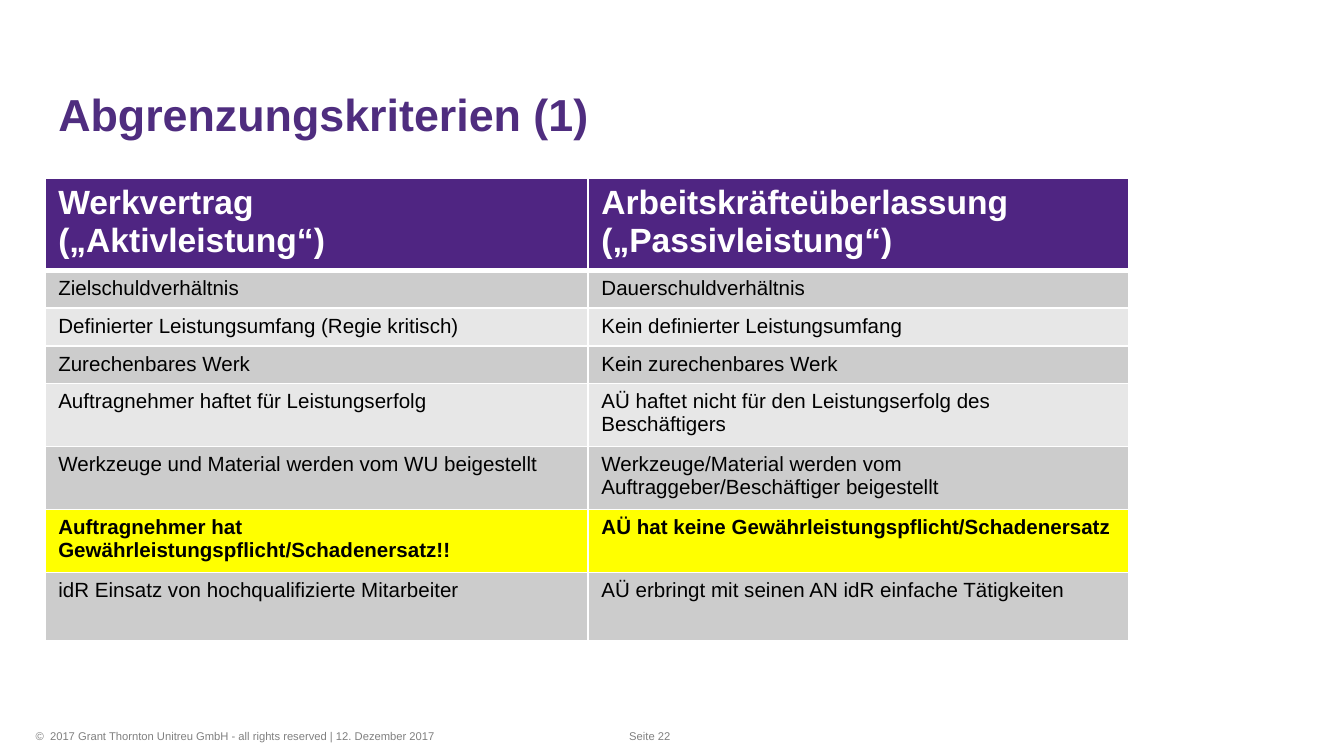
from pptx import Presentation
from pptx.dml.color import RGBColor
from pptx.enum.text import MSO_ANCHOR, PP_ALIGN
from pptx.oxml import parse_xml
from pptx.oxml.ns import nsdecls
from pptx.util import Pt

PX = 9525  # EMU per px, 96 px to the inch
LEFT, MIDDLE = PP_ALIGN.LEFT, MSO_ANCHOR.MIDDLE
PURPLE, WHITE, YELLOW = "4F2582", "FFFFFF", "FFFF00"
DARK, LIGHT = "CCCCCC", "E7E7E7"


def write(tf, text, size, color, bold=False, anchor=None):
    """Fill a text frame, one paragraph per line of text."""
    tf.text = text
    tf.word_wrap = True
    if anchor is not None:
        tf.vertical_anchor = anchor
    for p in tf.paragraphs:
        p.alignment = LEFT
        f = p.font
        for r in p.runs:
            f = r.font
            f.name, f.size, f.bold = "Arial", Pt(size), bold
            f.color.rgb = RGBColor.from_string(color)


def border(cell, side, width):
    cell._tc.get_or_add_tcPr().append(parse_xml(
        f'<a:{side} {nsdecls("a")} w="{Pt(width)}"><a:solidFill>'
        f'<a:srgbClr val="{WHITE}"/></a:solidFill></a:{side}>'))


prs = Presentation()
prs.slide_width, prs.slide_height = 960 * PX, 540 * PX
s = prs.slides.add_slide(prs.slide_layouts[5])

title = s.shapes.title
title.left, title.top, title.width, title.height = 32 * PX, 37 * PX, 787 * PX, 88 * PX
write(title.text_frame, "Abgrenzungskriterien (1)", 24, "4F2D7F", bold=True, anchor=MIDDLE)

# left text, right text, fill, row height
rows = [
    ("Werkvertrag\n(„Aktivleistung“)",
     "Arbeitskräfteüberlassung („Passivleistung“)", PURPLE, 66),
    ("Zielschuldverhältnis", "Dauerschuldverhältnis", DARK, 27),
    ("Definierter Leistungsumfang (Regie kritisch)",
     "Kein definierter Leistungsumfang", LIGHT, 27),
    ("Zurechenbares Werk", "Kein zurechenbares Werk", DARK, 27),
    ("Auftragnehmer haftet für Leistungserfolg",
     "AÜ haftet nicht für den Leistungserfolg des Beschäftigers", LIGHT, 45),
    ("Werkzeuge und Material werden vom WU beigestellt",
     "Werkzeuge/Material werden vom Auftraggeber/Beschäftiger beigestellt", DARK, 45),
    ("Auftragnehmer hat Gewährleistungspflicht/Schadenersatz!!",
     "AÜ hat keine Gewährleistungspflicht/Schadenersatz", YELLOW, 45),
    ("idR Einsatz von hochqualifizierte Mitarbeiter",
     "AÜ erbringt mit seinen AN idR einfache Tätigkeiten", DARK, 49),
]
height = sum(row[3] for row in rows)
table = s.shapes.add_table(len(rows), 2, 32 * PX, 127 * PX, 774 * PX, height * PX).table
for column, width in zip(table.columns, (388, 386)):
    column.width = width * PX

for i, (left, right, fill, row_height) in enumerate(rows):
    table.rows[i].height = row_height * PX
    header = i == 0
    for j, text in enumerate((left, right)):
        cell = table.cell(i, j)
        write(cell.text_frame, text, 18 if header else 11,
              WHITE if header else "000000", bold=fill in (PURPLE, YELLOW))
        for side in ("lnL", "lnR", "lnT", "lnB"):
            thick = (header and side == "lnB") or (i == 1 and side == "lnT")
            border(cell, side, 3 if thick else 1)
        cell.fill.solid()
        cell.fill.fore_color.rgb = RGBColor.from_string(fill)

footers = [
    ("©  2017 Grant Thornton Unitreu GmbH - all rights reserved | 12. Dezember 2017", 16, 400),
    ("Seite 22", 440, 81),
]
for text, x, width in footers:
    box = s.shapes.add_textbox(x * PX, 516 * PX, width * PX, 19 * PX)
    write(box.text_frame, text, 6, "808080")

prs.save("out.pptx")
